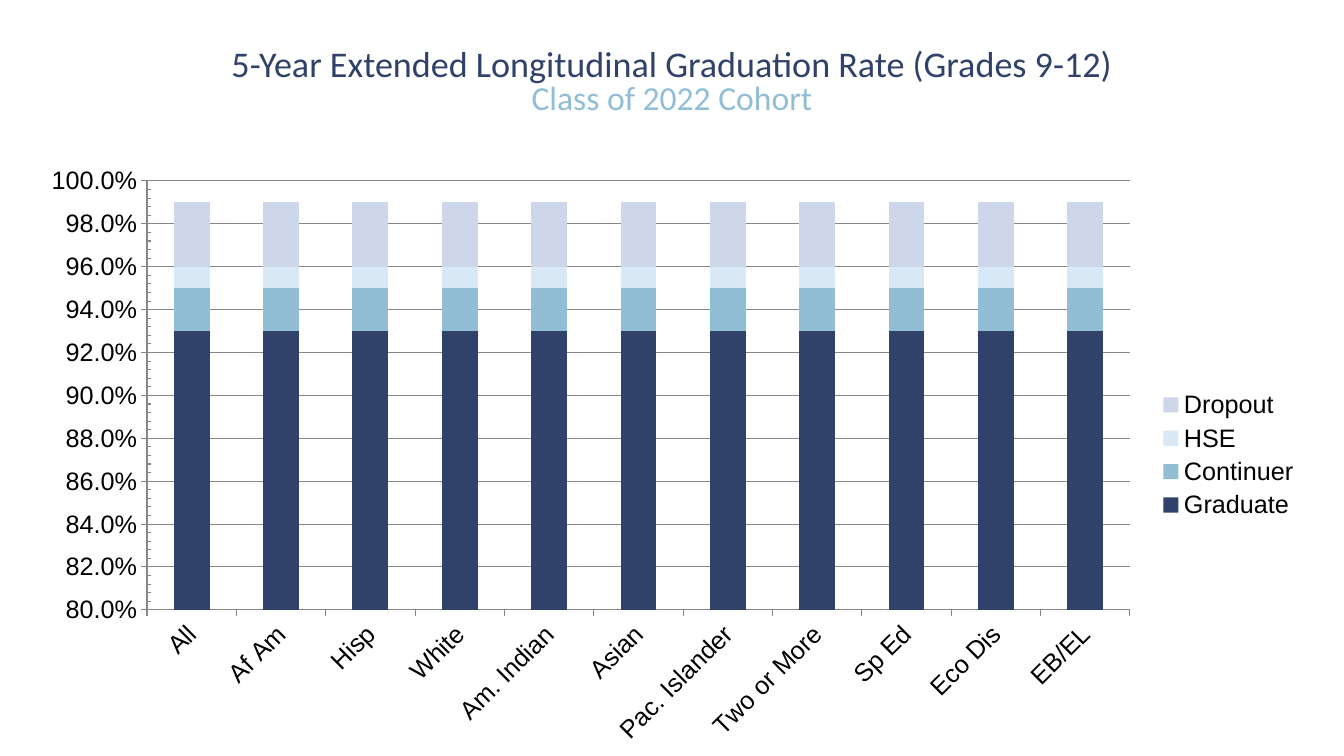
from lxml.etree import SubElement
from pptx import Presentation
from pptx.chart.data import CategoryChartData
from pptx.dml.color import RGBColor
from pptx.enum.chart import XL_CHART_TYPE as ChartType, XL_LEGEND_POSITION as LegendPosition
from pptx.enum.chart import XL_TICK_MARK as TickMark
from pptx.enum.text import MSO_ANCHOR as Anchor, MSO_AUTO_SIZE as AutoSize, PP_ALIGN as Align
from pptx.oxml.ns import qn
from pptx.util import Pt

EMU_PER_PX = 914400 / 100.8
SLIDE_SIZE = (1344, 756)
TITLE_BOX = (168, 33, 1008, 101)
CHART_BOX = (25, 154, 1285, 602)
PLOT_BOX = (147, 181, 983, 429)

TITLE_RUNS = [
    ("5-Year Extended Longitudinal Graduation Rate (Grades 9-12)", 25.8, "304269"),
    ("Class of 2022 Cohort", 24, "91BED4"),
]
GROUPS = ["All", "Af Am", "Hisp", "White", "Am. Indian", "Asian", "Pac. Islander",
          "Two or More", "Sp Ed", "Eco Dis", "EB/EL"]
OUTCOMES = [  # name, share in every group, colour
    ("Graduate", 0.93, "304269"),
    ("Continuer", 0.02, "91BED4"),
    ("HSE", 0.01, "D9E8F5"),
    ("Dropout", 0.03, "CED6E9"),
]
GREY = "878787"


def px(length):
    return round(length * EMU_PER_PX)


def color(hex_text):
    return RGBColor.from_string(hex_text)


def style_font(font, name, size, hex_text):
    font.name = name
    font.size = Pt(size)
    font.bold = False
    font.color.rgb = color(hex_text)


def style_line(line):
    line.color.rgb = color(GREY)
    line.width = Pt(0.75)


def fill_title(title):
    title.left, title.top, title.width, title.height = map(px, TITLE_BOX)
    frame = title.text_frame
    frame.word_wrap = True
    frame.auto_size = AutoSize.NONE
    frame.vertical_anchor = Anchor.MIDDLE
    paragraph = frame.paragraphs[0]
    paragraph.alignment = Align.CENTER
    paragraph.line_spacing = 0.8
    for index, (text, size, hex_text) in enumerate(TITLE_RUNS):
        if index:
            paragraph.add_line_break()
        run = paragraph.add_run()
        run.text = text
        style_font(run.font, "Calibri", size, hex_text)


def place_plot(chart):
    """Fix the inner plot area at PLOT_BOX, as fractions of the chart."""
    plot_area = chart.plots[0]._element.getparent()
    for old_layout in plot_area.findall(qn("c:layout")):
        plot_area.remove(old_layout)
    layout = SubElement(plot_area, qn("c:layout"))
    plot_area.insert(0, layout)
    manual = SubElement(layout, qn("c:manualLayout"))
    left, top, width, height = PLOT_BOX
    chart_left, chart_top, chart_width, chart_height = CHART_BOX
    settings = {
        "layoutTarget": "inner", "xMode": "edge", "yMode": "edge",
        "x": (left - chart_left) / chart_width,
        "y": (top - chart_top) / chart_height,
        "w": width / chart_width,
        "h": height / chart_height,
    }
    for tag, value in settings.items():
        SubElement(manual, qn(f"c:{tag}")).set("val", str(value))


def add_outcome_chart(slide):
    data = CategoryChartData(number_format="0.0%")
    data.categories = GROUPS
    for name, share, _ in OUTCOMES:
        data.add_series(name, [share] * len(GROUPS))
    chart = slide.shapes.add_chart(
        ChartType.COLUMN_STACKED, *map(px, CHART_BOX), data).chart
    chart.has_title = False
    style_font(chart.font, "Arial", 18, "000000")

    plot = chart.plots[0]
    plot.gap_width = 150
    plot.overlap = 100
    plot.vary_by_categories = False
    for series, (_, _, hex_text) in zip(plot.series, OUTCOMES):
        series.format.fill.solid()
        series.format.fill.fore_color.rgb = color(hex_text)

    category_axis, value_axis = chart.category_axis, chart.value_axis
    for axis in (category_axis, value_axis):
        axis.major_tick_mark = TickMark.OUTSIDE
        style_line(axis.format.line)
        style_font(axis.tick_labels.font, "Arial", 18, "000000")
    category_axis._element.find(qn("c:txPr")).find(qn("a:bodyPr")).set("rot", "-2700000")
    value_axis.minimum_scale = 0.8
    value_axis.maximum_scale = 1
    value_axis.major_unit = 0.02
    value_axis.minor_tick_mark = TickMark.INSIDE
    value_axis.minor_unit = 0.004
    value_axis.tick_labels.number_format = "0.0%"
    value_axis.tick_labels.number_format_is_linked = False
    value_axis.has_major_gridlines = True
    style_line(value_axis.major_gridlines.format.line)

    chart.has_legend = True
    chart.legend.position = LegendPosition.RIGHT
    chart.legend.include_in_layout = False
    style_font(chart.legend.font, "Arial", 18, "000000")
    place_plot(chart)


def main():
    presentation = Presentation()
    presentation.slide_width, presentation.slide_height = map(px, SLIDE_SIZE)
    slide = presentation.slides.add_slide(presentation.slide_layouts[5])
    fill_title(slide.shapes.title)
    add_outcome_chart(slide)
    presentation.save("out.pptx")


if __name__ == "__main__":
    main()
